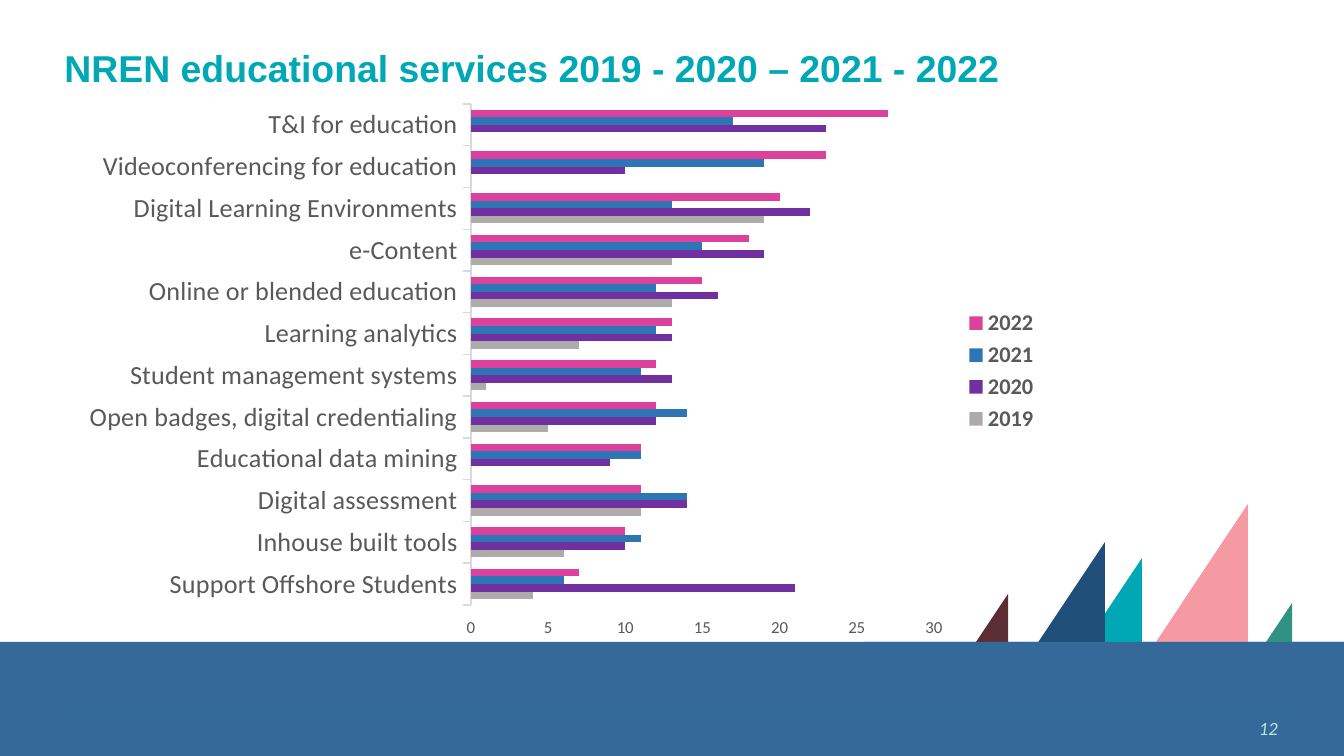
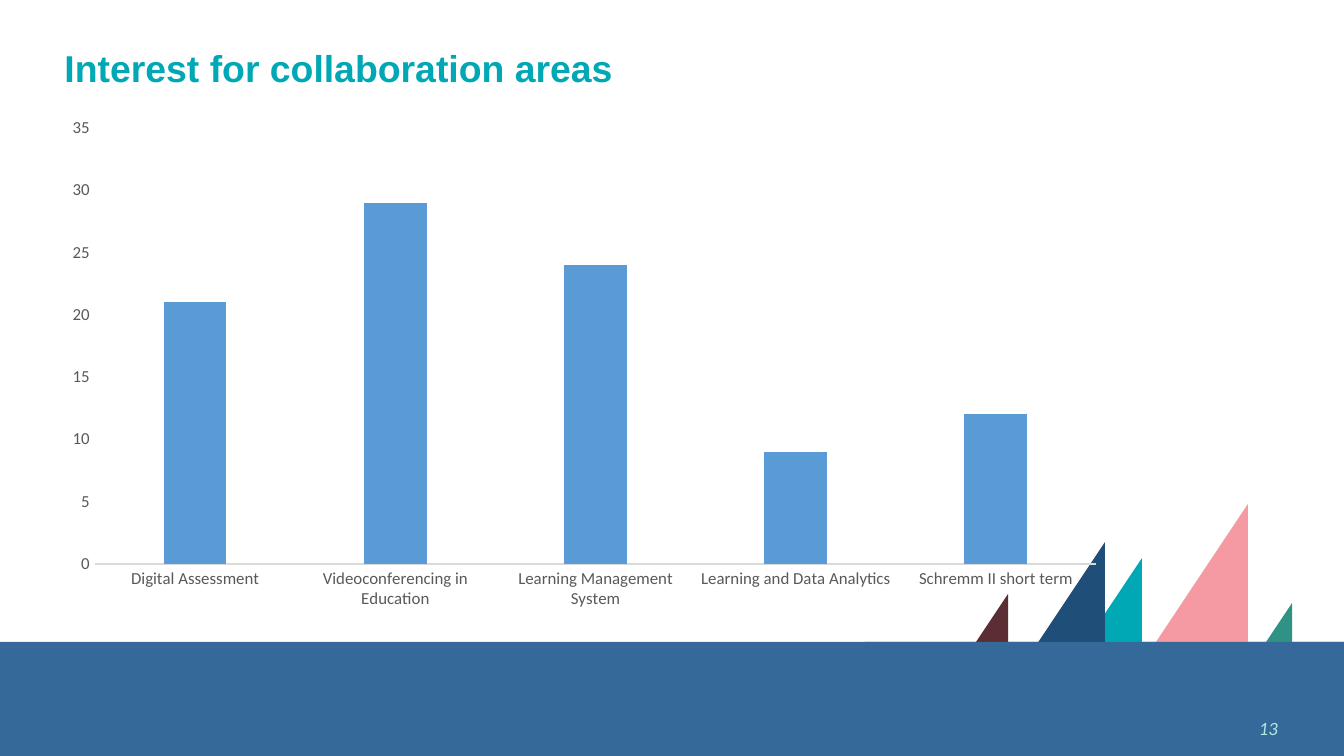
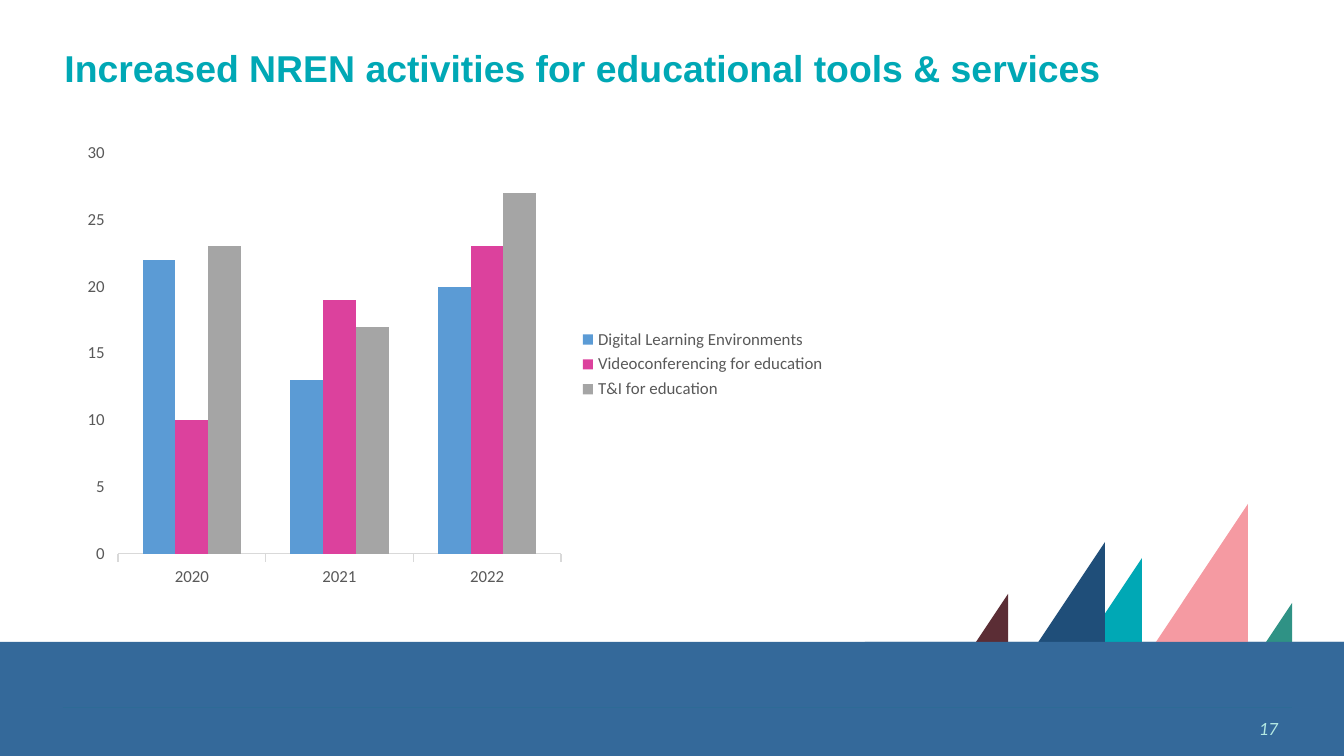
from lxml import etree
from pptx import Presentation
from pptx import util as u
from pptx.chart.data import CategoryChartData
from pptx.dml.color import RGBColor
from pptx.enum import chart as ch, shapes, text
from pptx.oxml.ns import qn

SCALE = 914400 / 134.4
WIDE, HIGH = 1344, 756
BAND_TOP = 642

TEAL, NAVY, PINK = "00A8B5", "1F4E79", "F59AA2"
BROWN, GREEN, BAND = "5B2D35", "2F9285", "34699A"
RULE, MINT, GREY, PALE = "2D6B96", "B4E9E2", "595959", "D9D9D9"
BLUE, ROSE = "5B9BD5", "DC419D"

# Right edge, top, height and colour of each sail
SAILS = [
    (1142, 558, 112, TEAL),
    (1105, 542, 122, NAVY),
    (1248, 504, 161, PINK),
    (1008, 594, 81, BROWN),
    (1292, 603, 81, GREEN),
]


def px(*sizes):
    return [u.Emu(round(size * SCALE)) for size in sizes]


def tint(code):
    return RGBColor.from_string(code)


def style(font, size, color, name="Calibri", bold=False, slant=False):
    font.size, font.name = u.Pt(size), name
    font.bold, font.italic = bold, slant
    font.color.rgb = tint(color)


def write(frame, words, align=text.PP_ALIGN.LEFT, space=None, **look):
    frame.word_wrap = True
    frame.auto_size = text.MSO_AUTO_SIZE.NONE
    frame.vertical_anchor = text.MSO_ANCHOR.MIDDLE
    para = frame.paragraphs[0]
    para.alignment = align
    para.line_spacing = space
    run = para.add_run()
    run.text = words
    style(run.font, **look)


class Deck:
    def __init__(self):
        self.file = Presentation()
        self.file.slide_width, self.file.slide_height = px(WIDE, HIGH)
        self.slide = None

    def add(self, title, width, page):
        """Start a slide with its title, scene and page number."""
        self.slide = self.file.slides.add_slide(self.file.slide_layouts[5])
        self.title(title, width)
        self.scene()
        box = self.slide.shapes.add_textbox(*px(989, 708, 302, 40))
        write(box.text_frame, page, text.PP_ALIGN.RIGHT,
              size=10, color=MINT, slant=True)

    def title(self, words, width):
        head = self.slide.shapes.title
        head.left, head.top, head.width, head.height = px(51, 19, width, 102)
        write(head.text_frame, words, space=0.9,
              size=20, color=TEAL, name="Arial", bold=True)

    def scene(self):
        """Draw the bottom band with the sails standing on it."""
        root = self.slide.shapes
        self.shape(root, shapes.MSO_SHAPE.RECTANGLE,
                   (0, BAND_TOP, WIDE, HIGH - BAND_TOP), BAND)
        self.line((63, 707), (1292, 707), RULE, 0.25)
        group = root.add_group_shape().shapes
        for sail in SAILS:
            self.sail(group, *sail)
        self.shape(group, shapes.MSO_SHAPE.RECTANGLE,
                   (865, BAND_TOP, WIDE - 865, 51), BAND)

    def shape(self, tree, kind, place, color):
        item = tree.add_shape(kind, *px(*place))
        item.shadow.inherit = False
        item.fill.solid()
        item.fill.fore_color.rgb = tint(color)
        item.line.fill.background()
        return item

    def sail(self, tree, right, top, height, color):
        """Turn a right triangle so that it stands on its short side."""
        width = height * 2 / 3
        mid_x, mid_y = right - width / 2, top + height / 2
        place = (mid_x - height / 2, mid_y - width / 2, height, width)
        item = self.shape(tree, shapes.MSO_SHAPE.ISOSCELES_TRIANGLE, place, color)
        item.adjustments[0] = 0
        item.rotation = 270

    def line(self, start, end, color, weight):
        link = self.slide.shapes.add_connector(
            shapes.MSO_CONNECTOR.STRAIGHT, *px(*start, *end))
        link.line.color.rgb = tint(color)
        link.line.width = u.Pt(weight)
        etree.SubElement(link.element.spPr, qn("a:effectLst"))

    def chart(self, kind, place, plot, names, series, top,
              gap=150, lap=0, size=9, ticks=True, key=None):
        """Add a bar chart; plot is the inner area, key the legend's format."""
        data = CategoryChartData()
        data.categories = names
        for name, _, values in series:
            data.add_series(name, values)
        graph = self.slide.shapes.add_chart(kind, *px(*place), data).chart
        graph.has_title = False
        style(graph.font, 10, "000000")
        bars = graph.plots[0]
        bars.gap_width, bars.overlap = gap, lap
        bars.vary_by_categories = False
        for item, (_, color, _) in zip(bars.series, series):
            item.format.fill.solid()
            item.format.fill.fore_color.rgb = tint(color)
            item.invert_if_negative = False
        mark = ch.XL_TICK_MARK.OUTSIDE if ticks else ch.XL_TICK_MARK.NONE
        for axis, points in ((graph.category_axis, size), (graph.value_axis, 9)):
            axis.has_major_gridlines = False
            axis.major_tick_mark = mark
            axis.minor_tick_mark = ch.XL_TICK_MARK.NONE
            style(axis.tick_labels.font, points, GREY)
        edge = graph.category_axis.format.line
        edge.color.rgb, edge.width = tint(PALE), u.Pt(0.75)
        scale = graph.value_axis
        scale.format.line.fill.background()
        scale.minimum_scale, scale.maximum_scale, scale.major_unit = 0, top, 5
        graph.has_legend = key is not None
        if key:
            graph.legend.position = ch.XL_LEGEND_POSITION.RIGHT
            graph.legend.include_in_layout = False
            style(graph.legend.font, color=GREY, **key)
        self.fit(graph, place, plot)

    def fit(self, graph, place, plot):
        """Fix the inner plot area, given in px on the slide."""
        area = graph.element.find(".//" + qn("c:plotArea"))
        for old in area.findall(qn("c:layout")):
            area.remove(old)
        frame = etree.Element(qn("c:layout"))
        area.insert(0, frame)
        left, top, width, height = place
        parts = {
            "layoutTarget": "inner", "xMode": "edge", "yMode": "edge",
            "x": (plot[0] - left) / width, "y": (plot[1] - top) / height,
            "w": plot[2] / width, "h": plot[3] / height,
        }
        inner = etree.SubElement(frame, qn("c:manualLayout"))
        for tag, value in parts.items():
            etree.SubElement(inner, qn("c:" + tag), val=str(value))


def main():
    deck = Deck()
    column = ch.XL_CHART_TYPE.COLUMN_CLUSTERED

    deck.add("NREN educational services 2019 - 2020 – 2021 - 2022", 1068, "12")
    deck.chart(
        ch.XL_CHART_TYPE.BAR_CLUSTERED, (70, 93, 982, 556), (471, 104, 463, 501),
        ["Support Offshore Students", "Inhouse built tools",
         "Digital assessment", "Educational data mining",
         "Open badges, digital credentialing", "Student management systems",
         "Learning analytics", "Online or blended education", "e-Content",
         "Digital Learning Environments", "Videoconferencing for education",
         "T&I for education"],
        [("2019", "AFABAB", [4, 6, 11, 0, 5, 1, 7, 13, 13, 19, 0, 0]),
         ("2020", "7030A0", [21, 10, 14, 9, 12, 13, 13, 16, 19, 22, 10, 23]),
         ("2021", "2E75B6", [6, 11, 14, 11, 14, 11, 12, 12, 15, 13, 19, 17]),
         ("2022", ROSE, [7, 10, 11, 11, 12, 12, 13, 15, 18, 20, 23, 27])],
        top=30, size=14, key={"size": 12, "bold": True})

    deck.add("Interest for collaboration areas", 946, "13")
    deck.chart(
        column, (51, 109, 1066, 511), (95, 128, 1001, 436),
        ["Digital Assessment", "Videoconferencing in Education",
         "Learning Management System", "Learning and Data Analytics",
         "Schremm II short term"],
        [("Series 1", BLUE, [21, 29, 24, 9, 12])],
        top=35, gap=219, lap=-27, ticks=False)

    deck.add("Increased NREN activities for educational tools & services",
             1122, "17")
    deck.chart(
        column, (73, 134, 766, 461), (118, 153, 443, 401),
        ["2020", "2021", "2022"],
        [("Digital Learning Environments", BLUE, [22, 13, 20]),
         ("Videoconferencing for education", ROSE, [10, 19, 23]),
         ("T&I for education", "A5A5A5", [23, 17, 27])],
        top=30, key={"size": 9})

    deck.file.save("out.pptx")


if __name__ == "__main__":
    main()
